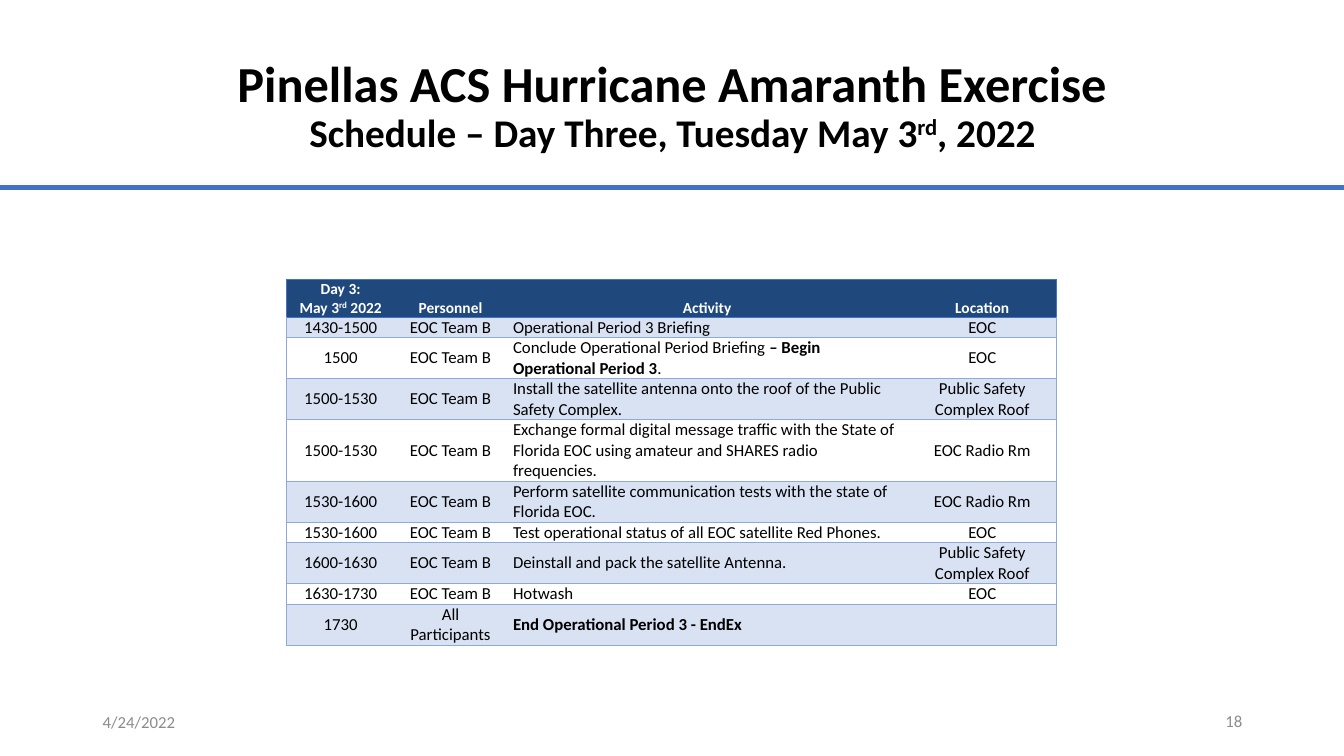
from dataclasses import dataclass

from lxml import etree
from pptx import Presentation
from pptx import util as u
from pptx.dml.color import RGBColor
from pptx.enum import shapes, text
from pptx.oxml import ns

COLOURS = {
    "ink": "000000",
    "white": "FFFFFF",
    "footer": "8C8C8C",
    "rule": "4472C4",
    "header": "1F497D",
    "band": "D9E2F3",
    "border": "8EAADB",
}
FONT = "Calibri"
SLIDE_WIDTH, SLIDE_HEIGHT = u.Inches(13.33), u.Inches(7.5)
NO_STYLE = "{2D5ABB26-0587-4C30-8999-92F81FD0307C}"
CENTER, LEFT, RIGHT = text.PP_ALIGN.CENTER, text.PP_ALIGN.LEFT, text.PP_ALIGN.RIGHT
MIDDLE, BOTTOM = text.MSO_ANCHOR.MIDDLE, text.MSO_ANCHOR.BOTTOM


@dataclass(frozen=True)
class Span:
    words: str
    bold: bool = False
    size: float = 12
    raised: bool = False
    new_line: bool = False


@dataclass(frozen=True)
class Block:
    """A text area, placed in percent of the slide's size."""
    left: float
    top: float
    width: float
    height: float
    spans: tuple[Span, ...]
    colour: str
    align: text.PP_ALIGN
    spacing: float = 1.0


@dataclass(frozen=True)
class Session:
    time: str
    activity: tuple[Span, ...]
    location: str
    lines: int
    personnel: str = "EOC Team B"


def across(percent: float) -> u.Emu:
    return u.Emu(round(SLIDE_WIDTH * percent / 100))


def down(percent: float) -> u.Emu:
    return u.Emu(round(SLIDE_HEIGHT * percent / 100))


def rgb(colour: str) -> RGBColor:
    return RGBColor.from_string(COLOURS[colour])


def write(paragraph, spans: tuple[Span, ...], colour: str, align: text.PP_ALIGN) -> None:
    paragraph.alignment = align
    for span in spans:
        if span.new_line:
            paragraph.add_line_break()
        run = paragraph.add_run()
        run.text = span.words
        run.font.name, run.font.size = FONT, u.Pt(span.size)
        run.font.bold = span.bold
        run.font.color.rgb = rgb(colour)
        if span.raised:
            run.font._element.set("baseline", "30000")


def draw_block(slide, block: Block) -> None:
    frame = slide.shapes.add_textbox(across(block.left), down(block.top),
                                     across(block.width), down(block.height)).text_frame
    frame.word_wrap = True
    frame.vertical_anchor = MIDDLE
    frame.paragraphs[0].line_spacing = block.spacing
    write(frame.paragraphs[0], block.spans, block.colour, block.align)


def set_borders(cell, sides: dict[str, str]) -> None:
    """Sides are given in schema order: L, R, T, B."""
    properties = cell._tc.get_or_add_tcPr()
    for place, (side, colour) in enumerate(sides.items()):
        line = etree.Element(ns.qn(f"a:ln{side}"), w=str(u.Pt(1)))
        fill = etree.SubElement(line, ns.qn("a:solidFill"))
        etree.SubElement(fill, ns.qn("a:srgbClr"), val=COLOURS[colour])
        properties.insert(place, line)


def draw_schedule(slide, left: float, top: float, widths: tuple[float, ...],
                  headings: tuple[tuple[Span, ...], ...],
                  sessions: tuple[Session, ...]) -> None:
    heights = [HEADER_HEIGHT] + [LINE_HEIGHT * session.lines for session in sessions]
    rows = [headings] + [((Span(s.time),), (Span(s.personnel),), s.activity,
                          (Span(s.location),) if s.location else ()) for s in sessions]
    schedule = slide.shapes.add_table(len(rows), len(widths), across(left), down(top),
                                      across(sum(widths)), down(sum(heights))).table
    schedule._tbl.tblPr.find(ns.qn("a:tableStyleId")).text = NO_STYLE
    schedule.horz_banding = False
    for column, width in zip(schedule.columns, widths):
        column.width = across(width)

    last = len(widths) - 1
    for r, (row, height) in enumerate(zip(rows, heights)):
        schedule.rows[r].height = down(height)
        is_header = r == 0
        edge = "rule" if is_header else "border"
        for c, spans in enumerate(row):
            cell = schedule.cell(r, c)
            cell.margin_left = cell.margin_right = u.Inches(0.07)
            cell.margin_top = cell.margin_bottom = 0
            cell.vertical_anchor = BOTTOM if is_header else MIDDLE
            if is_header or r % 2:
                cell.fill.solid()
                cell.fill.fore_color.rgb = rgb("header" if is_header else "band")
            else:
                cell.fill.background()
            sides = {"L": edge} if c == 0 else {"R": edge} if c == last else {}
            set_borders(cell, sides | {"T": "rule" if r <= 1 else "border", "B": edge})
            is_activity = c == 2 and not is_header
            write(cell.text_frame.paragraphs[0], spans,
                  "white" if is_header else "ink", LEFT if is_activity else CENTER)


def draw_rule(slide, top: float) -> None:
    rule = slide.shapes.add_connector(shapes.MSO_CONNECTOR.STRAIGHT,
                                      0, down(top), across(100), down(top))
    rule.line.color.rgb = rgb("rule")
    rule.line.width = u.Pt(3)
    etree.SubElement(rule._element.spPr, ns.qn("a:effectLst"))


# Title and footer
BLOCKS = (
    Block(13.2, 5.33, 73.67, 17.87, (
        Span("Pinellas ACS Hurricane Amaranth Exercise", True, 36),
        Span("Schedule – Day Three, Tuesday May 3", True, 28, new_line=True),
        Span("rd", True, 28, raised=True),
        Span(", 2022", True, 28),
    ), "ink", CENTER, 0.9),
    Block(6.9, 92.8, 22.5, 5.33, (Span("4/24/2022"),), "footer", LEFT),
    Block(70.67, 92.67, 22.5, 5.33, (Span("18"),), "footer", RIGHT),
)

# Schedule
HEADER_HEIGHT, LINE_HEIGHT = 5.0, 2.71
COLUMN_WIDTHS = (8.1, 8.25, 29.93, 11.02)
HEADINGS = (
    (Span("Day 3:", True, 11), Span("May 3", True, 11, new_line=True),
     Span("rd", True, 11, raised=True), Span(" 2022", True, 11)),
    *((Span(heading, True, 11),) for heading in ("Personnel", "Activity", "Location")),
)
SESSIONS = (
    Session("1430-1500", (Span("Operational Period 3 Briefing"),), "EOC", 1),
    Session("1500", (Span("Conclude Operational Period Briefing"),
                     Span(" – Begin Operational Period 3", True), Span(".")), "EOC", 2),
    Session("1500-1530", (Span("Install the satellite antenna onto the roof of the Public "
                               "Safety Complex."),), "Public Safety Complex Roof", 2),
    Session("1500-1530", (Span("Exchange formal digital message traffic with the State of "
                               "Florida EOC using amateur and SHARES radio frequencies."),),
            "EOC Radio Rm", 3),
    Session("1530-1600", (Span("Perform satellite communication tests with the state of "
                               "Florida EOC."),), "EOC Radio Rm", 2),
    Session("1530-1600", (Span("Test operational status of all EOC satellite Red Phones."),),
            "EOC", 1),
    Session("1600-1630", (Span("Deinstall and pack the satellite Antenna."),),
            "Public Safety Complex Roof", 2),
    Session("1630-1730", (Span("Hotwash"),), "EOC", 1),
    Session("1730", (Span("End Operational Period 3 - EndEx", True),), "", 2,
            "All Participants"),
)


def main() -> None:
    deck = Presentation()
    deck.slide_width, deck.slide_height = SLIDE_WIDTH, SLIDE_HEIGHT
    slide = deck.slides.add_slide(deck.slide_layouts[6])
    draw_rule(slide, 24.8)
    draw_schedule(slide, 21.3, 36.93, COLUMN_WIDTHS, HEADINGS, SESSIONS)
    for block in BLOCKS:
        draw_block(slide, block)
    deck.save("out.pptx")


if __name__ == "__main__":
    main()
